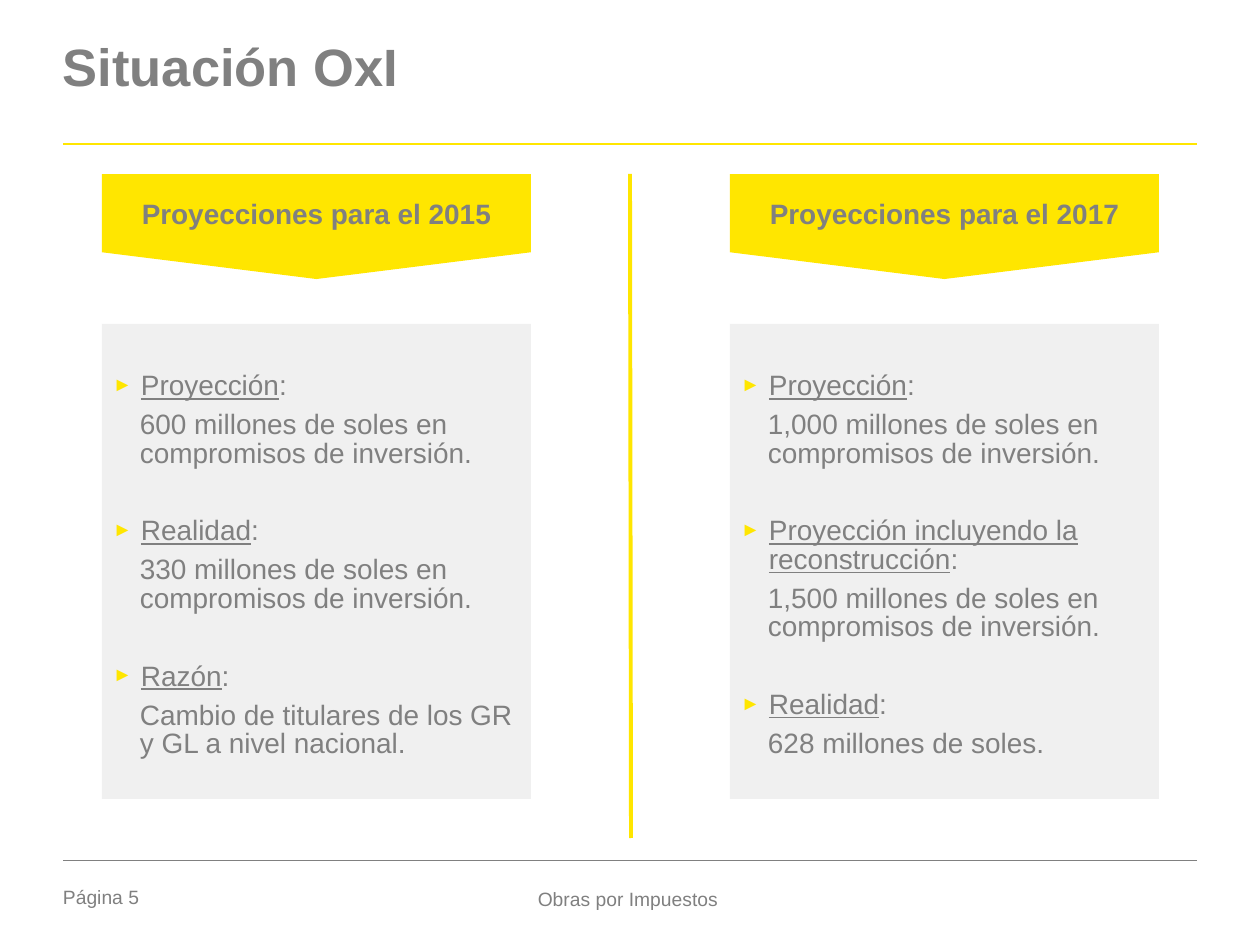
from lxml.etree import SubElement
from pptx import Presentation
from pptx.dml.color import RGBColor
from pptx.enum.shapes import MSO_CONNECTOR, MSO_SHAPE
from pptx.enum.text import MSO_ANCHOR, PP_ALIGN
from pptx.oxml.ns import qn
from pptx.util import Pt

PX = 914400 / 126
YELLOW = RGBColor(0xFF, 0xE6, 0x00)
GRAY = RGBColor(0x80, 0x80, 0x80)
PANEL = RGBColor(0xF0, 0xF0, 0xF0)


def px(*lengths):
    return [round(length * PX) for length in lengths]


def write(paragraph, text, size=16, bold=False, underline=False,
          align=PP_ALIGN.LEFT, spacing=None):
    paragraph.alignment = align
    if spacing:
        paragraph.line_spacing = spacing
    run = paragraph.add_run()
    run.text = text
    run.font.name = "Arial"
    run.font.size = Pt(size)
    run.font.bold = bold
    run.font.underline = underline
    run.font.color.rgb = GRAY


presentation = Presentation()
presentation.slide_width, presentation.slide_height = px(1260, 945)
slide = presentation.slides.add_slide(presentation.slide_layouts[6])

# Title and footer texts
for text, box, anchor, style in [
    ("Situación OxI", (63, 44, 1134, 118), MSO_ANCHOR.TOP,
     dict(size=30, bold=True, spacing=0.85)),
    ("Página 5", (63, 885, 100, 28), MSO_ANCHOR.TOP, dict(size=11)),
    ("Obras por Impuestos", (431, 885, 394, 28), MSO_ANCHOR.MIDDLE,
     dict(size=11, align=PP_ALIGN.CENTER)),
]:
    frame = slide.shapes.add_textbox(*px(*box)).text_frame
    frame.word_wrap = True
    frame.vertical_anchor = anchor
    frame.margin_left = frame.margin_top = frame.margin_right = frame.margin_bottom = 0
    write(frame.paragraphs[0], text, **style)

# Header rule, footer rule and column divider
for ends, color, width in [
    ((63, 144, 1197, 144), YELLOW, 1.5),
    ((63, 860, 1197, 860), GRAY, 0.25),
    ((630, 174, 631, 838), YELLOW, 2.25),
]:
    rule = slide.shapes.add_connector(MSO_CONNECTOR.STRAIGHT, *px(*ends))
    rule.line.color.rgb = color
    rule.line.width = Pt(width)
    SubElement(rule._element.spPr, qn("a:effectLst"))

# One column per year: arrow heading above a panel of points
columns = [
    (102, "Proyecciones para el 2015", [
        ("Proyección", "600 millones de soles en compromisos de inversión."),
        ("Realidad", "330 millones de soles en compromisos de inversión."),
        ("Razón", "Cambio de titulares de los GR y GL a nivel nacional."),
    ]),
    (730, "Proyecciones para el 2017", [
        ("Proyección", "1,000 millones de soles en compromisos de inversión."),
        ("Proyección incluyendo la reconstrucción",
         "1,500 millones de soles en compromisos de inversión."),
        ("Realidad", "628 millones de soles."),
    ]),
]
for left, heading, points in columns:
    arrow = slide.shapes.add_shape(MSO_SHAPE.DOWN_ARROW, *px(left, 174, 429, 105))
    arrow.adjustments[0] = 1
    arrow.adjustments[1] = 0.255
    panel = slide.shapes.add_shape(MSO_SHAPE.RECTANGLE, *px(left, 324, 429, 475))
    for shape, color in [(arrow, YELLOW), (panel, PANEL)]:
        shape.shadow.inherit = False
        shape.fill.solid()
        shape.fill.fore_color.rgb = color
        shape.line.fill.background()
        shape.text_frame.word_wrap = True
    arrow.text_frame.vertical_anchor = MSO_ANCHOR.MIDDLE
    write(arrow.text_frame.paragraphs[0], heading, bold=True, align=PP_ALIGN.CENTER)

    frame = panel.text_frame
    frame.vertical_anchor = MSO_ANCHOR.TOP
    frame.margin_left = frame.margin_right = frame.margin_bottom = 0
    frame.margin_top = px(49)[0]
    for index, (label, detail) in enumerate(points):
        # Underlined label with a triangle bullet
        paragraph = frame.add_paragraph() if index else frame.paragraphs[0]
        paragraph.space_before = Pt(22 if index else 0)
        paragraph.space_after = Pt(6)
        write(paragraph, label, underline=True, spacing=0.85)
        write(paragraph, ":", spacing=0.85)
        properties = paragraph._p.get_or_add_pPr()
        margin, indent = px(39, -28)
        properties.set("marL", str(margin))
        properties.set("indent", str(indent))
        bullet_color = SubElement(properties, qn("a:buClr"))
        SubElement(bullet_color, qn("a:srgbClr"), val=str(YELLOW))
        SubElement(properties, qn("a:buSzPct"), val="70000")
        SubElement(properties, qn("a:buFont"), typeface="Arial")
        SubElement(properties, qn("a:buChar"), char="►")

        # Detail below the label
        paragraph = frame.add_paragraph()
        paragraph.space_after = Pt(6)
        write(paragraph, detail, spacing=0.85)
        properties = paragraph._p.get_or_add_pPr()
        properties.set("marL", str(px(38)[0]))
        properties.set("indent", "0")

presentation.save("out.pptx")
